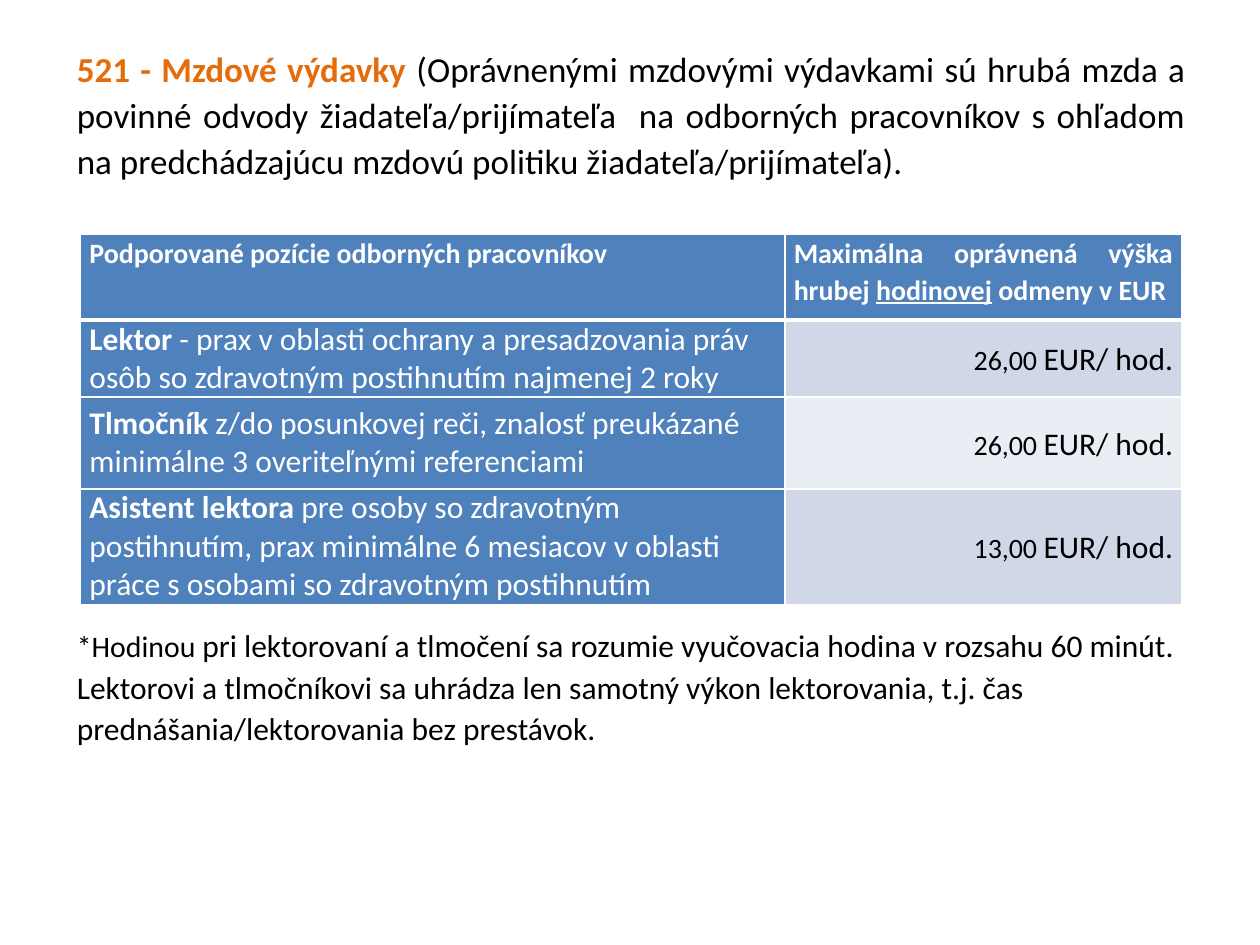
from typing import NamedTuple

from lxml.etree import SubElement
from pptx import Presentation
from pptx.dml.color import RGBColor
from pptx.enum.text import MSO_ANCHOR, MSO_AUTO_SIZE, PP_ALIGN
from pptx.oxml.ns import qn
from pptx.util import Inches, Pt

ORANGE = RGBColor(0xE4, 0x6C, 0x0A)
BLACK = RGBColor(0, 0, 0)
WHITE = RGBColor(0xFF, 0xFF, 0xFF)
BLUE = RGBColor(0x4F, 0x81, 0xBD)
BAND_DARK = RGBColor(0xD0, 0xD8, 0xE8)
BAND_LIGHT = RGBColor(0xE9, 0xED, 0xF4)


class Run(NamedTuple):
    text: str
    size: float
    color: RGBColor = BLACK
    bold: bool = False
    underline: bool = False


class Position(NamedTuple):
    name: str
    detail: str
    rate: str
    height: float


POSITIONS = [
    Position("Lektor", " - prax v oblasti ochrany a presadzovania práv osôb so "
             "zdravotným postihnutím najmenej 2 roky", "26,00 ", 0.6),
    Position("Tlmočník", " z/do posunkovej reči, znalosť preukázané minimálne "
             "3 overiteľnými referenciami", "26,00 ", 0.73),
    Position("Asistent lektora ", "pre osoby so zdravotným postihnutím, prax minimálne "
             "6 mesiacov v oblasti práce s osobami so zdravotným postihnutím", "13,00 ", 0.9),
]
HEADER_HEIGHT = 0.68
COLUMN_WIDTHS = [5.59, 3.15]


def write_paragraph(p, runs: list[Run], **formats) -> None:
    for name, value in formats.items():
        setattr(p, name, value)
    for run in runs:
        r = p.add_run()
        r.text = run.text
        font = {"name": "Calibri", "size": Pt(run.size), "bold": run.bold,
                "underline": run.underline}
        for name, value in font.items():
            setattr(r.font, name, value)
        r.font.color.rgb = run.color


def remove_bullet(p) -> None:
    pPr = p._p.get_or_add_pPr()
    pPr.set("marL", "0")
    pPr.set("indent", "0")
    SubElement(pPr, qn("a:buNone"))


def set_borders(cell, top: float, bottom: float) -> None:
    tcPr = cell._tc.get_or_add_tcPr()
    for side, width in {"L": 1, "R": 1, "T": top, "B": bottom}.items():
        ln = SubElement(tcPr, qn(f"a:ln{side}"), w=str(Pt(width)))
        SubElement(SubElement(ln, qn("a:solidFill")), qn("a:srgbClr"), val=str(WHITE))


def fill_cell(cell, runs: list[Run], fill: RGBColor, anchor=MSO_ANCHOR.MIDDLE,
              top: float = 1, bottom: float = 1, **formats) -> None:
    set_borders(cell, top, bottom)
    cell.fill.solid()
    cell.fill.fore_color.rgb = fill
    cell_format = {"margin_left": Inches(0.07), "margin_right": Inches(0.07),
                   "margin_top": 0, "margin_bottom": 0, "vertical_anchor": anchor}
    for name, value in cell_format.items():
        setattr(cell, name, value)
    write_paragraph(cell.text_frame.paragraphs[0], runs, **formats)


def add_body(s) -> None:
    title = s.shapes.title
    title.element.getparent().remove(title.element)
    body = s.placeholders[1]
    body.left, body.top = Inches(0.51), Inches(0.29)
    body.width, body.height = Inches(9), Inches(6.54)
    tf = body.text_frame
    tf.auto_size = MSO_AUTO_SIZE.NONE
    intro, note = tf.paragraphs[0], tf.add_paragraph()
    for p in (intro, note):
        remove_bullet(p)
    write_paragraph(intro, [
        Run("521 - Mzdové výdavky ", 20, ORANGE, bold=True),
        Run("(Oprávnenými mzdovými výdavkami sú hrubá mzda a povinné odvody "
            "žiadateľa/prijímateľa  na odborných pracovníkov s ohľadom na "
            "predchádzajúcu mzdovú politiku žiadateľa/prijímateľa).", 20),
    ], alignment=PP_ALIGN.JUSTIFY, line_spacing=1.1, space_before=Pt(0))
    # The space before the note leaves room for the table
    write_paragraph(note, [
        Run("*Hodinou ", 17),
        Run("pri lektorovaní a tlmočení sa rozumie vyučovacia hodina v rozsahu "
            "60 minút. Lektorovi a tlmočníkovi sa uhrádza len samotný výkon "
            "lektorovania, t.j. čas prednášania/lektorovania bez prestávok.", 18),
    ], alignment=PP_ALIGN.LEFT, line_spacing=1.1, space_before=Pt(252))


def add_rate_table(s) -> None:
    heights = [HEADER_HEIGHT] + [position.height for position in POSITIONS]
    table = s.shapes.add_table(
        len(heights), len(COLUMN_WIDTHS), Inches(0.64), Inches(1.86),
        Inches(sum(COLUMN_WIDTHS)), Inches(sum(heights))).table
    for column, width in zip(table.columns, COLUMN_WIDTHS):
        column.width = Inches(width)
    for row, height in zip(table.rows, heights):
        row.height = Inches(height)

    # Header row
    header = {"fill": BLUE, "anchor": MSO_ANCHOR.TOP, "bottom": 3, "line_spacing": 1.07}
    fill_cell(table.cell(0, 0), [
        Run("Podporované pozície odborných pracovníkov", 16, WHITE, bold=True)], **header)
    fill_cell(table.cell(0, 1), [
        Run("Maximálna oprávnená výška hrubej ", 16, WHITE, bold=True),
        Run("hodinovej", 16, WHITE, bold=True, underline=True),
        Run(" odmeny v EUR", 16, WHITE, bold=True),
    ], alignment=PP_ALIGN.JUSTIFY, **header)

    # One row per position, in alternating bands
    for i, position in enumerate(POSITIONS, start=1):
        top = 3 if i == 1 else 1
        fill_cell(table.cell(i, 0), [
            Run(position.name, 18, WHITE, bold=True),
            Run(position.detail, 18, WHITE),
        ], BLUE, top=top)
        fill_cell(table.cell(i, 1), [Run(position.rate, 16), Run("EUR/ hod.", 18)],
                  BAND_DARK if i % 2 else BAND_LIGHT, top=top,
                  alignment=PP_ALIGN.RIGHT, line_spacing=1.07)


def main() -> None:
    prs = Presentation()
    prs.slide_width, prs.slide_height = Inches(10), Inches(7.5)
    s = prs.slides.add_slide(prs.slide_layouts[1])
    add_body(s)
    add_rate_table(s)
    prs.save("out.pptx")


if __name__ == "__main__":
    main()
